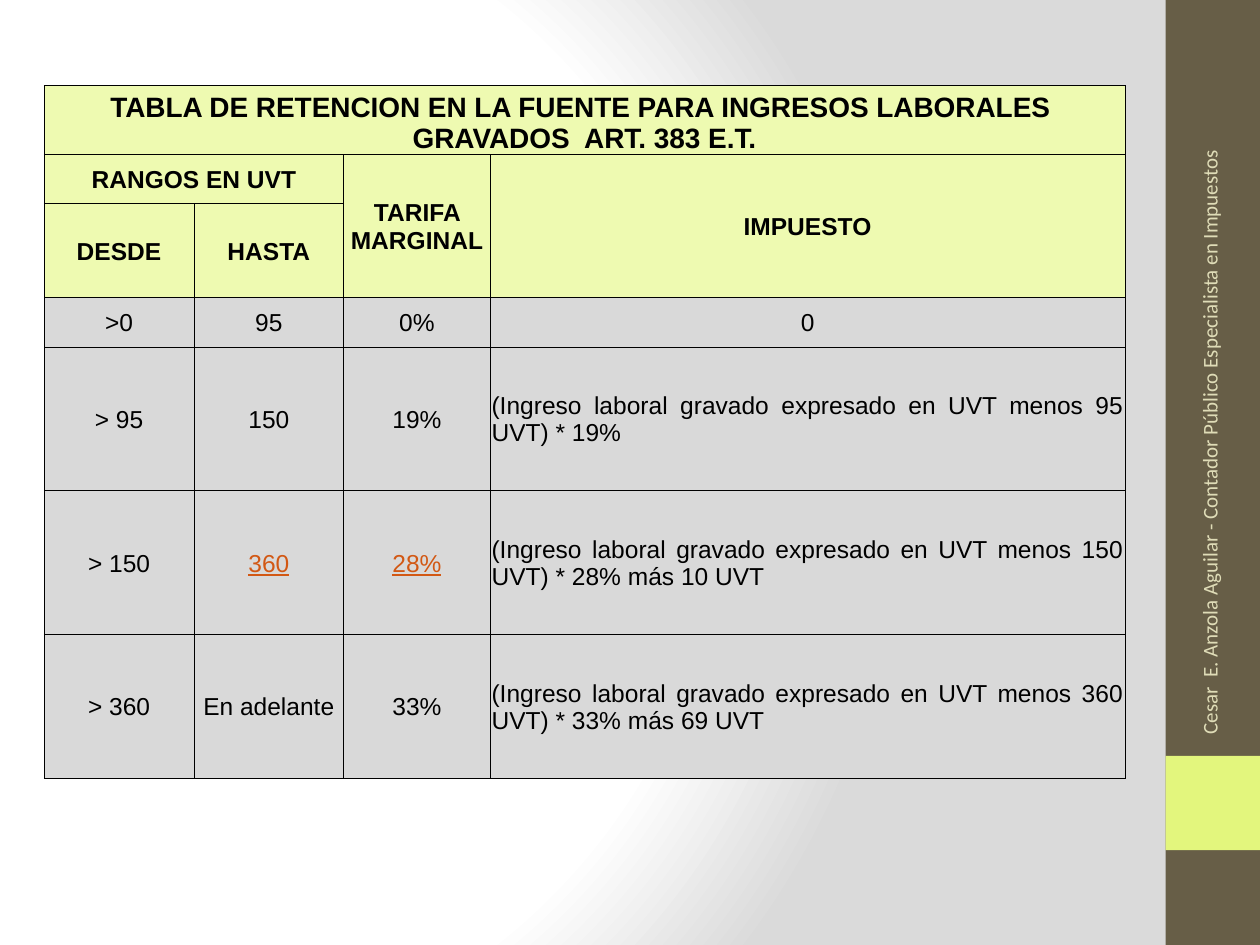
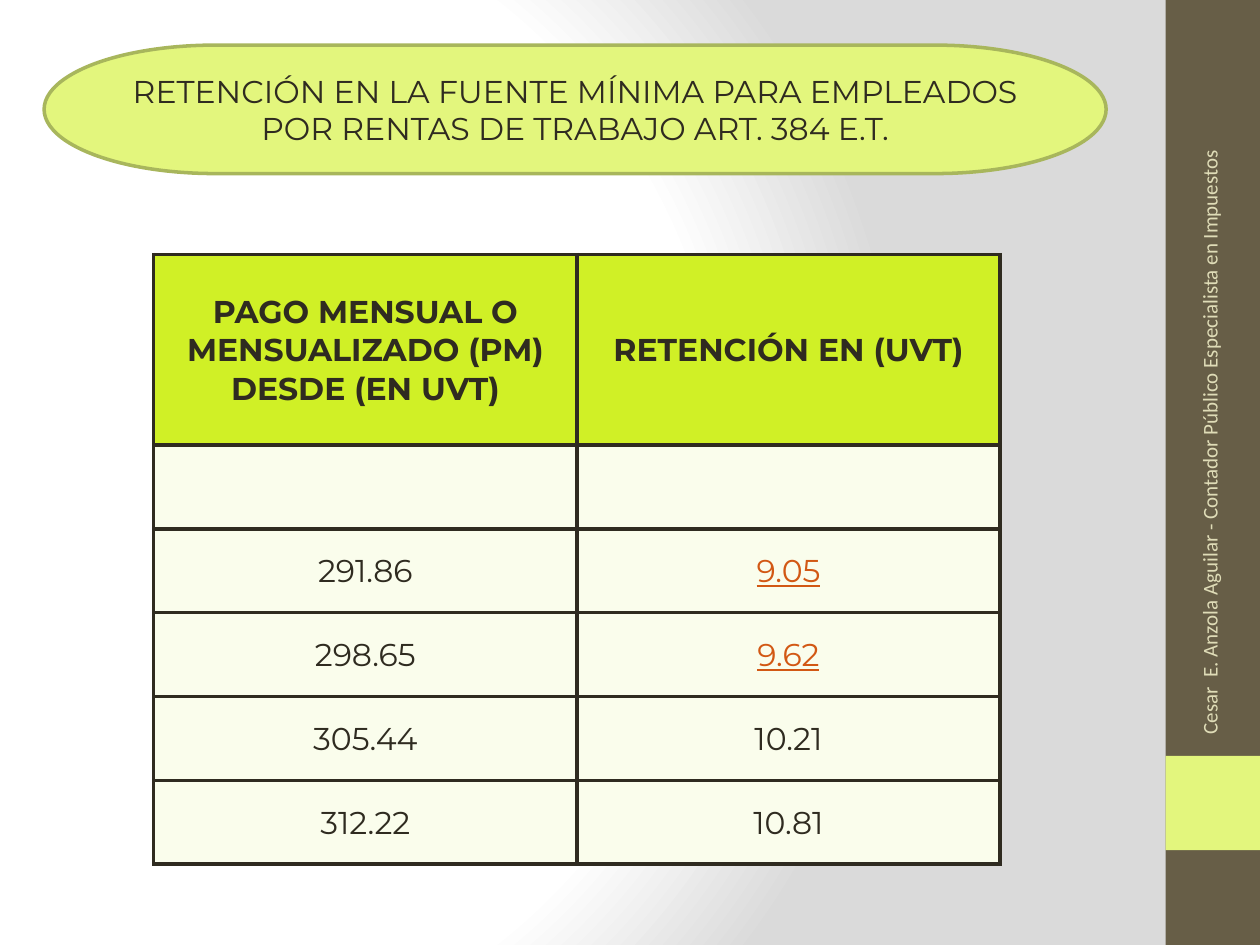
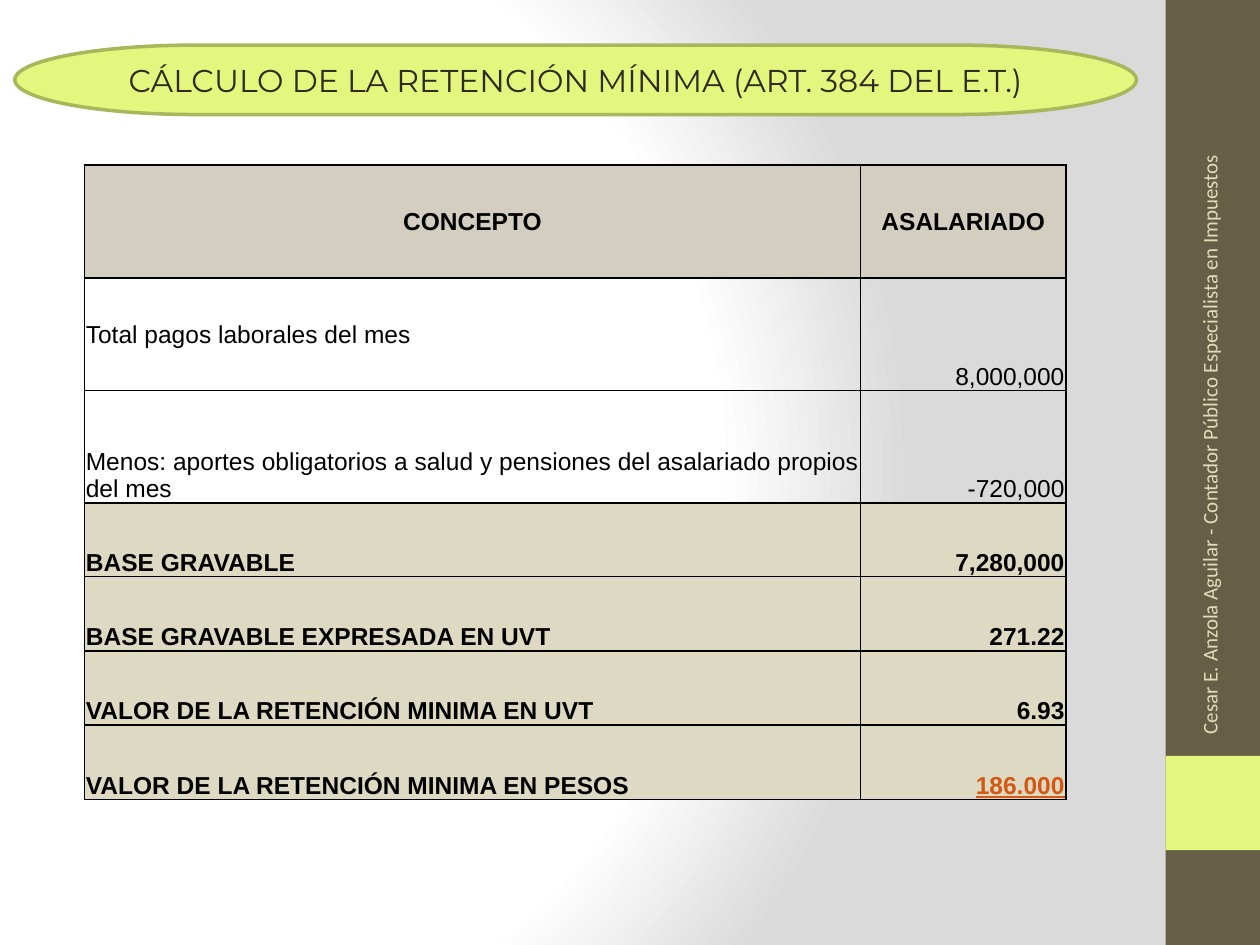
import pptx
import pptx.dml.color
import pptx.enum.shapes
import pptx.enum.text
import pptx.oxml
import pptx.oxml.ns
import pptx.util

Cm = pptx.util.Cm
Pt = pptx.util.Pt
SHAPE = pptx.enum.shapes.MSO_SHAPE
ALIGN = pptx.enum.text.PP_ALIGN
MID = pptx.enum.text.MSO_ANCHOR.MIDDLE
LOW = pptx.enum.text.MSO_ANCHOR.BOTTOM

BROWN, LIME, OLIVE, CREAM = "675E47", "E3F67D", "A8B65C", "DFDCB7"
DARK, BLACK, RUST = "2F2B20", "000000", "D25814"
AUTHOR = "Cesar  E. Anzola Aguilar - Contador Público Especialista en Impuestos"


def paint(target, color):
    if hasattr(target, "solid"):
        target.solid()
        target = target.fore_color
    target.rgb = pptx.dml.color.RGBColor.from_string(color)


def write(frame, text, face, size, color, align=ALIGN.LEFT, bold=False, under=False):
    para = frame.paragraphs[0]
    para.alignment = align
    run = para.add_run()
    run.text = text
    font = run.font
    font.name, font.size, font.bold, font.underline = face, Pt(size), bold, under
    paint(font.color, color)


def block(slide, kind, box, color):
    shape = slide.shapes.add_shape(kind, *map(Cm, box))
    shape.shadow.inherit = False
    paint(shape.fill, color)
    shape.line.fill.background()
    return shape


def backdrop(master):
    stops = "".join(
        f'<a:gs pos="{spot * 1000}"><a:srgbClr val="{color}"/></a:gs>'
        for spot, color in ((0, "FFFFFF"), (75, "FFFFFF"), (100, "DADADA")))
    page = master.element.cSld
    old = page.find(pptx.oxml.ns.qn("p:bg"))
    if old is not None:
        page.remove(old)
    page.insert(0, pptx.oxml.parse_xml(
        f'<p:bg {pptx.oxml.ns.nsdecls("p", "a")}><p:bgPr><a:gradFill rotWithShape="1">'
        f'<a:gsLst>{stops}</a:gsLst><a:path path="circle">'
        '<a:fillToRect l="20000" t="50000" r="100000" b="50000"/></a:path>'
        '</a:gradFill><a:effectLst/></p:bgPr></p:bg>'))


def bands(slide, master, left=23.5, width=1.9):
    for top, height, color in ((0, 19.05, BROWN), (15.24, width, LIME)):
        band = block(slide, SHAPE.RECTANGLE, (left, top, width, height), color)
        master.shapes.element.append(band.element)


def credit(slide, text=AUTHOR, center=24.38, bottom=15.05, length=12.52, height=1.02):
    left = center - length / 2
    top = bottom - length / 2 - height / 2
    box = slide.shapes.add_textbox(*map(Cm, (left, top, length, height)))
    box.rotation = 270
    frame = box.text_frame
    frame.word_wrap = True
    frame.vertical_anchor = MID
    write(frame, text, "Calibri", 12, CREAM)


def heading(slide, box, text):
    pill = block(slide, SHAPE.FLOWCHART_TERMINATOR, box, LIME)
    paint(pill.line.fill, OLIVE)
    pill.line.width = Pt(2)
    left, top, width, height = box
    title = slide.shapes.title
    slide.shapes.element.append(title.element)
    title.left, title.top = Cm(left + width * 0.05), Cm(top)
    title.width, title.height = Cm(width * 0.9), Cm(height)
    frame = title.text_frame
    frame.auto_size = pptx.enum.text.MSO_AUTO_SIZE.NONE
    frame.word_wrap = True
    frame.vertical_anchor = MID
    write(frame, text, "Montserrat", 18, DARK, ALIGN.CENTER)


def border(cell, color, weight):
    props = cell._tc.get_or_add_tcPr()
    for side in ("lnL", "lnR", "lnT", "lnB"):
        props.append(pptx.oxml.parse_xml(
            f'<a:{side} {pptx.oxml.ns.nsdecls("a")} w="{Pt(weight)}"><a:solidFill>'
            f'<a:srgbClr val="{color}"/></a:solidFill></a:{side}>'))


def grid(slide, spot, cols, rows, color, weight):
    box = (*spot, sum(cols), sum(rows))
    table = slide.shapes.add_table(len(rows), len(cols), *map(Cm, box)).table
    table.first_row = table.horz_banding = False
    for col, width in zip(table.columns, cols):
        col.width = Cm(width)
    for row, height in zip(table.rows, rows):
        row.height = Cm(height)
    for cell in table.iter_cells():
        border(cell, color, weight)
    return table


def fill_cell(cell, text, face, size, ink, back, align=ALIGN.CENTER,
              anchor=MID, bold=False, mark=()):
    if back:
        paint(cell.fill, back)
    else:
        cell.fill.background()
    if not text:
        return
    cell.margin_left = cell.margin_right = cell.margin_top = Cm(0.03)
    cell.margin_bottom = 0
    cell.vertical_anchor = anchor
    hot = text in mark
    write(cell.text_frame, text, face, size, RUST if hot else ink, align, bold, hot)


def rates(slide, spot):
    data = (
        ("TABLA DE RETENCION EN LA FUENTE PARA INGRESOS LABORALES  GRAVADOS  ART. 383 E.T.",
         "", "", ""),
        ("RANGOS EN UVT", "", "TARIFA MARGINAL", "IMPUESTO"),
        ("DESDE", "HASTA", "", ""),
        (">0", "95", "0%", "0"),
        ("> 95", "150", "19%",
         "(Ingreso laboral gravado expresado en UVT menos 95 UVT) * 19%"),
        ("> 150", "360", "28%",
         "(Ingreso laboral gravado expresado en UVT menos 150 UVT) * 28% más 10 UVT"),
        ("> 360", "En adelante", "33%",
         "(Ingreso laboral gravado expresado en UVT menos 360 UVT) * 33% más 69 UVT"),
    )
    table = grid(slide, spot, (3.02, 3.02, 2.95, 12.8),
                 (0.99, 0.99, 1.9, 0.99, 2.9, 2.9, 2.9), BLACK, 0.5)
    for first, last in (((0, 0), (0, 3)), ((1, 0), (1, 1)),
                        ((1, 2), (2, 2)), ((1, 3), (2, 3))):
        table.cell(*first).merge(table.cell(*last))
    for r, row in enumerate(data):
        head = r < 3
        for c, text in enumerate(row):
            fill_cell(table.cell(r, c), text, "Arial", 14 if r else 16, BLACK,
                      "EEFAB1" if head else "D9D9D9",
                      ALIGN.JUSTIFY if r > 3 and c == 3 else ALIGN.CENTER,
                      MID if r else LOW, head, ("360", "28%"))


def minimum(slide, spot):
    data = (
        ("PAGO MENSUAL O MENSUALIZADO (PM) DESDE (EN UVT)", "RETENCIÓN EN (UVT)"),
        ("", ""),
        ("291.86", "9.05"),
        ("298.65", "9.62"),
        ("305.44", "10.21"),
        ("312.22", "10.81"),
    )
    table = grid(slide, spot, (8.53, 8.53), (3.84, *[1.69] * 5), DARK, 2.25)
    for r, row in enumerate(data):
        for c, text in enumerate(row):
            fill_cell(table.cell(r, c), text, "Montserrat", 18, DARK,
                      "FAFDEC" if r else "D0F026", bold=r == 0, mark=("9.05", "9.62"))


def result(slide, spot):
    data = (
        ("CONCEPTO", "ASALARIADO"),
        ("Total pagos laborales del mes", "8,000,000"),
        ("Menos: aportes obligatorios a salud y pensiones del asalariado propios del mes",
         "-720,000"),
        ("BASE GRAVABLE", "7,280,000"),
        ("BASE GRAVABLE EXPRESADA EN UVT", "271.22"),
        ("VALOR DE LA RETENCIÓN MINIMA EN UVT", "6.93"),
        ("VALOR DE LA RETENCIÓN MINIMA EN PESOS", "186.000"),
    )
    backs = ("D3CEBF", None, None, *["DDD9C3"] * 4)
    table = grid(slide, spot, (15.65, 4.14),
                 (2.27, 2.27, 2.27, 1.48, 1.5, 1.5, 1.5), BLACK, 1)
    for r, row in enumerate(data):
        for c, text in enumerate(row):
            align = (ALIGN.JUSTIFY if r in (2, 5, 6) else ALIGN.LEFT, ALIGN.RIGHT)[c]
            fill_cell(table.cell(r, c), text, "Arial", 14, BLACK, backs[r],
                      align if r else ALIGN.CENTER,
                      MID if r == 0 or (r, c) == (1, 0) else LOW,
                      r not in (1, 2), ("186.000",))


def main():
    deck = pptx.Presentation()
    deck.slide_width, deck.slide_height = Cm(25.4), Cm(19.05)
    master = deck.slide_master
    titled, blank = deck.slide_layouts[5], deck.slide_layouts[6]
    backdrop(master)

    slide = deck.slides.add_slide(blank)
    bands(slide, master)
    credit(slide)
    rates(slide, (0.89, 1.73))

    slide = deck.slides.add_slide(titled)
    credit(slide)
    heading(slide, (0.89, 0.91, 21.41, 2.59),
            "RETENCIÓN EN LA FUENTE MÍNIMA PARA EMPLEADOS POR RENTAS DE TRABAJO ART. 384 E.T.")
    minimum(slide, (3.1, 5.13))

    slide = deck.slides.add_slide(titled)
    credit(slide, AUTHOR.replace("  ", " "))
    heading(slide, (0.3, 0.91, 22.61, 1.4),
            "CÁLCULO DE LA RETENCIÓN MÍNIMA (ART. 384 DEL E.T.)")
    result(slide, (1.7, 3.33))

    deck.save("out.pptx")


if __name__ == "__main__":
    main()
